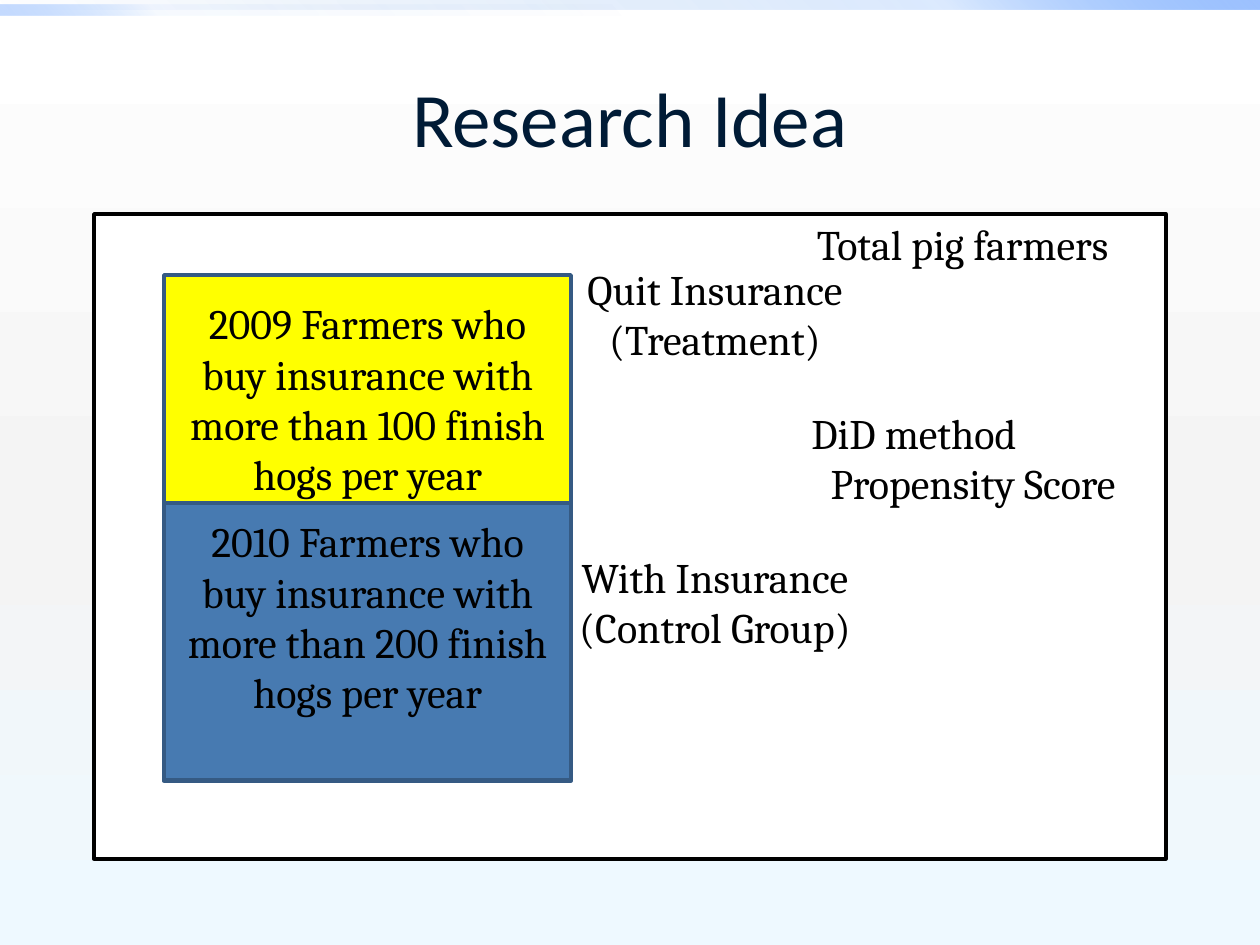
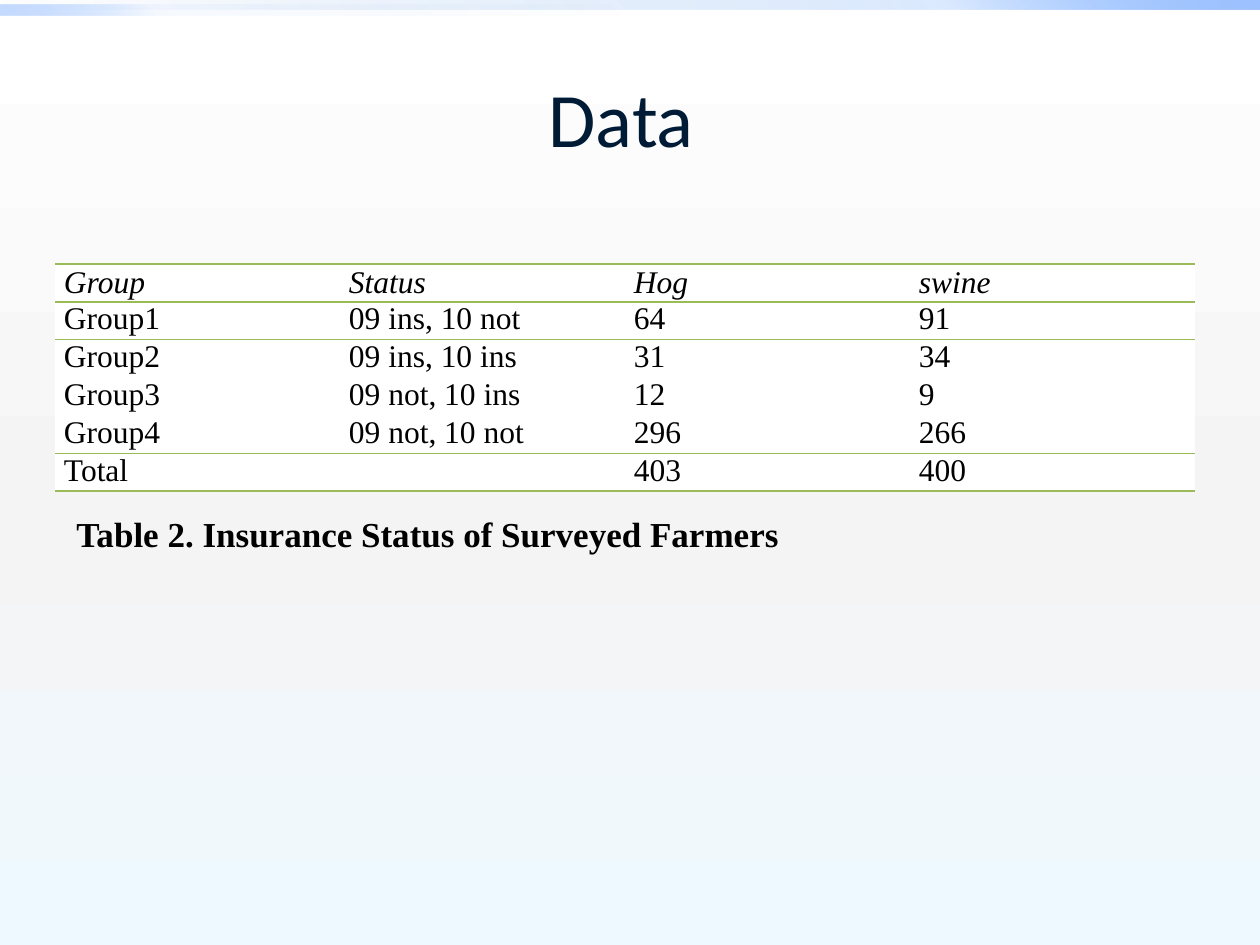
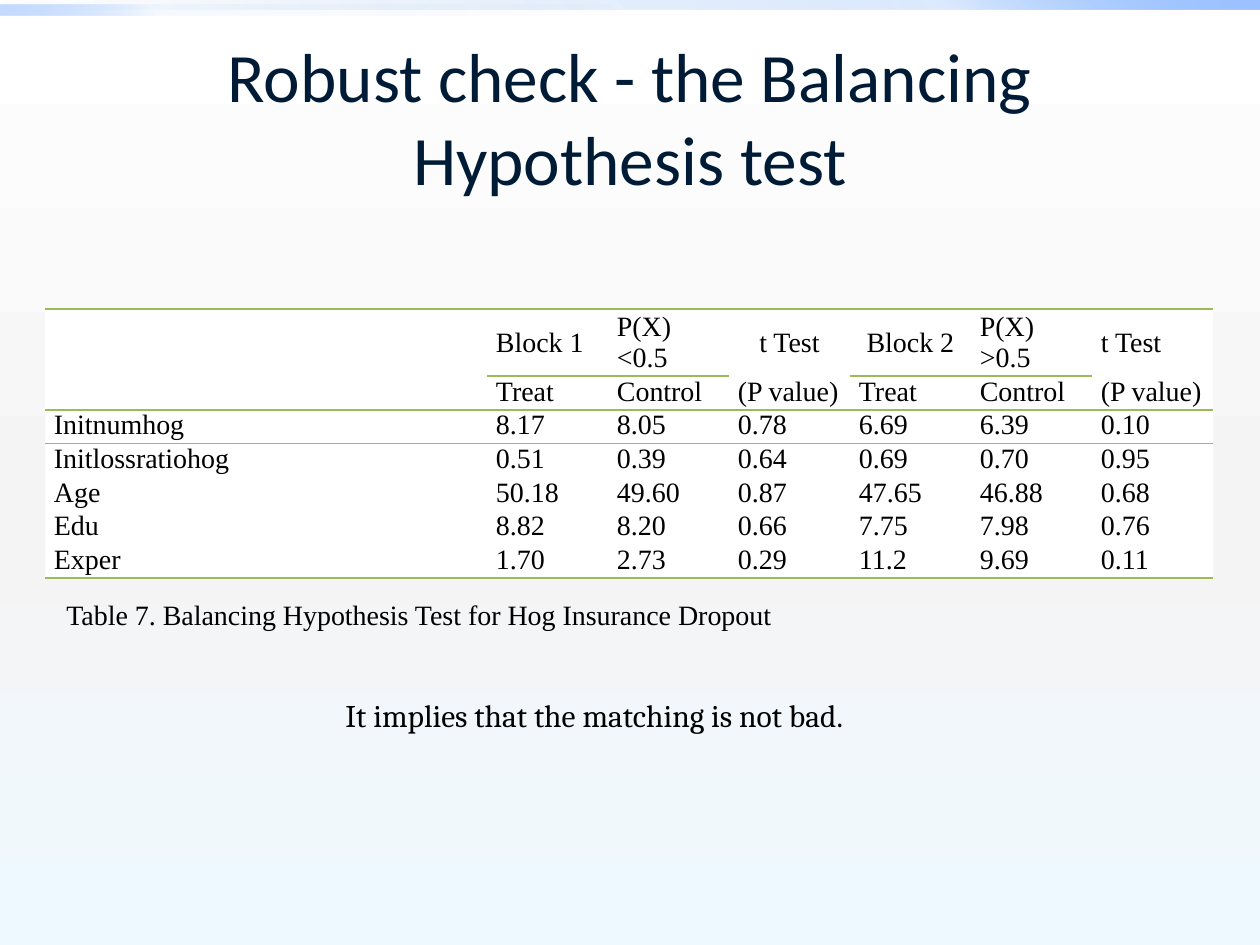
from dataclasses import dataclass
from itertools import cycle

import pptx
import pptx.dml.color
import pptx.enum.shapes
import pptx.enum.text
import pptx.oxml
import pptx.oxml.ns
import pptx.presentation
import pptx.shapes.autoshape
import pptx.slide
import pptx.text.text
import pptx.util
from lxml import etree

ALIGN = pptx.enum.text.PP_ALIGN
ANCHOR = pptx.enum.text.MSO_ANCHOR
qn = pptx.oxml.ns.qn
EMU_PER_PX = 914400 / 126
SLIDE_WIDTH, SLIDE_HEIGHT = 1260, 945
NO_TABLE_STYLE = "{2D5ABB26-0587-4C30-8999-92F81FD0307C}"


@dataclass(frozen=True)
class Theme:
    title_color: str = "001B36"
    ink: str = "000000"
    paper: str = "FFFFFF"
    outline: str = "355A83"
    yellow: str = "FFFF00"
    blue: str = "477AB1"
    rule: str = "9BBB59"
    title_font: str = "Calibri"
    body_font: str = "Cambria"
    table_font: str = "Times New Roman"
    title_size: float = 44
    long_title_size: float = 39.6
    body_size: float = 24
    caption_size: float = 20
    table_size: float = 18
    small_size: float = 16
    outline_width: float = 2
    rule_width: float = 1


THEME = Theme()


@dataclass(frozen=True)
class Box:
    left: int
    top: int
    width: int
    height: int

    def emu(self) -> list[pptx.util.Emu]:
        return [px(v) for v in (self.left, self.top, self.width, self.height)]


@dataclass(frozen=True)
class Stop:
    position: int
    color: str
    alpha: int = 100


@dataclass(frozen=True)
class Band:
    box: Box
    angle: int
    stops: tuple[Stop, ...]


@dataclass(frozen=True)
class Panel:
    box: Box
    fill: str
    line: str


@dataclass(frozen=True)
class Label:
    box: Box
    text: str
    aligns: tuple[ALIGN, ...] = (ALIGN.CENTER,)


@dataclass(frozen=True)
class Grid:
    """A table; rules maps each horizontal boundary to the columns it crosses."""
    left: int
    top: int
    columns: tuple[int, ...]
    row_heights: tuple[int, ...]
    rows: tuple[tuple[str, ...], ...]
    rules: dict[int, tuple[int, ...]]
    size: float
    italic_header: bool = False
    centered: tuple[tuple[int, int], ...] = ()


BACKGROUND = (Stop(0, "FFFFFF"), Stop(55, "F4F4F4"), Stop(100, "EEF9FF"))
BANDS = (
    Band(Box(0, 0, SLIDE_WIDTH, 10), 315,
         (Stop(0, "0058B7", 0), Stop(75, "4F95FF", 20), Stop(100, "9EC2FF"))),
    Band(Box(0, 5, SLIDE_WIDTH // 2, 10), 135,
         (Stop(0, "0058B7", 0), Stop(75, "4F95FF", 5), Stop(100, "9EC2FF", 60))),
)
TITLE_BOX = Box(63, 38, 1134, 157)

PANELS = (
    Panel(Box(94, 214, 1072, 645), THEME.paper, THEME.ink),
    Panel(Box(164, 275, 407, 506), THEME.yellow, THEME.outline),
    Panel(Box(164, 503, 407, 277), THEME.blue, THEME.outline),
)
LABELS = (
    Label(Box(769, 214, 387, 59), "Total pig farmers"),
    Label(Box(174, 304, 387, 189),
          "2009 Farmers who buy insurance with more than 100 finish hogs per year"),
    Label(Box(174, 522, 387, 189),
          "2010 Farmers who buy insurance with more than 200 finish hogs per year"),
    Label(Box(551, 284, 328, 59), "Quit Insurance\n(Treatment)"),
    Label(Box(551, 552, 328, 100), "With Insurance\n(Control Group)"),
    Label(Box(799, 393, 348, 129), "DiD method\nPropensity Score",
          (ALIGN.LEFT, ALIGN.CENTER)),
)

STATUS_GRID = Grid(
    left=55, top=264, columns=(285,) * 4, row_heights=(35,) * 6,
    rows=(
        ("Group", "Status", "Hog", "swine"),
        ("Group1", "09 ins, 10 not ", "64", "91"),
        ("Group2", "09 ins, 10 ins", "31", "34"),
        ("Group3", "09 not, 10 ins", "12", "9"),
        ("Group4", "09 not, 10 not", "296", "266"),
        ("Total", "", "403", "400"),
    ),
    rules={boundary: tuple(range(4)) for boundary in (0, 1, 5, 6)},
    size=THEME.table_size, italic_header=True,
)
BALANCE_GRID = Grid(
    left=45, top=309, columns=(442,) + (121,) * 6, row_heights=(62,) + (31,) * 6,
    rows=(
        ("", "Block 1", "P(X)\n<0.5", "t Test", "Block 2", "P(X)\n>0.5", "t Test"),
        ("", "Treat", "Control", "(P value)", "Treat", "Control", "(P value)"),
        ("Initnumhog", "8.17", "8.05", "0.78", "6.69", "6.39", "0.10"),
        ("Initlossratiohog", "0.51", "0.39", "0.64", "0.69", "0.70", "0.95"),
        ("Age", "50.18", "49.60", "0.87", "47.65", "46.88", "0.68"),
        ("Edu", "8.82", "8.20", "0.66", "7.75", "7.98", "0.76"),
        ("Exper", "1.70", "2.73", "0.29", "11.2", "9.69", "0.11"),
    ),
    rules={**{boundary: tuple(range(7)) for boundary in (0, 2, 7)}, 1: (1, 2, 4, 5)},
    size=THEME.small_size, centered=((0, 3), (0, 4)),
)


def px(value: int) -> pptx.util.Emu:
    return pptx.util.Emu(round(value * EMU_PER_PX))


def rgb(color: str) -> pptx.dml.color.RGBColor:
    return pptx.dml.color.RGBColor.from_string(color)


def write_text(frame: pptx.text.text.TextFrame, text: str, *, font: str, size: float,
               color: str = THEME.ink, aligns: tuple[ALIGN, ...] = (ALIGN.LEFT,),
               bold: bool = False, italic: bool = False) -> None:
    """Write one paragraph per line, repeating the alignments in turn."""
    for index, (line, align) in enumerate(zip(text.split("\n"), cycle(aligns))):
        paragraph = frame.add_paragraph() if index else frame.paragraphs[0]
        paragraph.alignment = align
        if line:
            run = paragraph.add_run()
            run.text = line
            style = run.font
        else:
            style = pptx.text.text.Font(paragraph._p.get_or_add_endParaRPr())
        style.name = font
        style.size = pptx.util.Pt(size)
        style.bold = bold
        style.italic = italic
        style.color.rgb = rgb(color)


def add_text(slide: pptx.slide.Slide, box: Box, text: str, *,
             anchor: ANCHOR = ANCHOR.MIDDLE, **text_format) -> None:
    frame = slide.shapes.add_textbox(*box.emu()).text_frame
    frame.word_wrap = True
    frame.vertical_anchor = anchor
    write_text(frame, text, **text_format)


def set_gradient(fill: pptx.dml.fill.FillFormat, owner: etree._Element,
                 stops: tuple[Stop, ...], angle: int) -> None:
    """Fill with any number of stops; the angle runs clockwise."""
    fill.gradient()
    gradient = owner.find(".//" + qn("a:gradFill"))
    stop_list = gradient.find(qn("a:gsLst"))
    for old_stop in list(stop_list):
        stop_list.remove(old_stop)
    for stop in stops:
        entry = etree.SubElement(stop_list, qn("a:gs"), pos=str(stop.position * 1000))
        color = etree.SubElement(entry, qn("a:srgbClr"), val=stop.color)
        if stop.alpha < 100:
            etree.SubElement(color, qn("a:alpha"), val=str(stop.alpha * 1000))
    gradient.find(qn("a:lin")).set("ang", str(angle * 60000))


def add_rectangle(slide: pptx.slide.Slide, box: Box) -> pptx.shapes.autoshape.Shape:
    shape = slide.shapes.add_shape(
        pptx.enum.shapes.MSO_SHAPE.RECTANGLE, *box.emu())
    shape.shadow.inherit = False
    return shape


def add_band(slide: pptx.slide.Slide, band: Band) -> None:
    shape = add_rectangle(slide, band.box)
    set_gradient(shape.fill, shape._element.spPr, band.stops, band.angle)
    shape.line.fill.background()


def add_panel(slide: pptx.slide.Slide, panel: Panel) -> None:
    shape = add_rectangle(slide, panel.box)
    shape.fill.solid()
    shape.fill.fore_color.rgb = rgb(panel.fill)
    shape.line.color.rgb = rgb(panel.line)
    shape.line.width = pptx.util.Pt(THEME.outline_width)


def add_cell_rule(cell: pptx.table._Cell, tag: str) -> None:
    line = etree.SubElement(cell._tc.get_or_add_tcPr(), qn(tag),
                            w=str(pptx.util.Pt(THEME.rule_width)))
    fill = etree.SubElement(line, qn("a:solidFill"))
    etree.SubElement(fill, qn("a:srgbClr"), val=THEME.rule)


def add_grid(slide: pptx.slide.Slide, grid: Grid) -> None:
    box = Box(grid.left, grid.top, sum(grid.columns), sum(grid.row_heights))
    table = slide.shapes.add_table(
        len(grid.rows), len(grid.columns), *box.emu()).table
    table.first_row = table.horz_banding = False
    table._tbl.tblPr.find(qn("a:tableStyleId")).text = NO_TABLE_STYLE
    for column, width in zip(table.columns, grid.columns):
        column.width = px(width)
    for row, height in zip(table.rows, grid.row_heights):
        row.height = px(height)
    for row_index, texts in enumerate(grid.rows):
        for column_index, text in enumerate(texts):
            cell = table.cell(row_index, column_index)
            cell.margin_left = cell.margin_right = px(9)
            cell.margin_top = cell.margin_bottom = 0
            cell.vertical_anchor = ANCHOR.TOP if row_index else ANCHOR.MIDDLE
            for tag, boundary in (("a:lnT", row_index), ("a:lnB", row_index + 1)):
                if column_index in grid.rules.get(boundary, ()):
                    add_cell_rule(cell, tag)
            cell.fill.solid()
            cell.fill.fore_color.rgb = rgb(THEME.paper)
            centered = (row_index, column_index) in grid.centered
            write_text(cell.text_frame, text, font=THEME.table_font, size=grid.size,
                       aligns=(ALIGN.CENTER if centered else ALIGN.JUSTIFY,),
                       italic=grid.italic_header and row_index == 0)


def add_slide(presentation: pptx.presentation.Presentation, title: str,
              title_size: float = THEME.title_size) -> pptx.slide.Slide:
    """Add a slide with the shared background, bands and title."""
    slide = presentation.slides.add_slide(presentation.slide_layouts[6])
    set_gradient(slide.background.fill, slide._element, BACKGROUND, 90)
    for band in BANDS:
        add_band(slide, band)
    add_text(slide, TITLE_BOX, title, font=THEME.title_font, size=title_size,
             color=THEME.title_color, aligns=(ALIGN.CENTER,))
    return slide


def add_research_slide(presentation: pptx.presentation.Presentation) -> None:
    slide = add_slide(presentation, "Research Idea")
    for panel in PANELS:
        add_panel(slide, panel)
    for label in LABELS:
        add_text(slide, label.box, label.text, font=THEME.body_font,
                 size=THEME.body_size, aligns=label.aligns)


def add_data_slide(presentation: pptx.presentation.Presentation) -> None:
    slide = add_slide(presentation, "Data ")
    add_grid(slide, STATUS_GRID)
    add_text(slide, Box(64, 506, 932, 94),
             "Table 2. Insurance Status of Surveyed Farmers", anchor=ANCHOR.TOP,
             font=THEME.table_font, size=THEME.caption_size, bold=True)


def add_balance_slide(presentation: pptx.presentation.Presentation) -> None:
    slide = add_slide(presentation, "Robust check - the Balancing Hypothesis test",
                      THEME.long_title_size)
    add_grid(slide, BALANCE_GRID)
    add_text(slide, Box(54, 591, 759, 47),
             "Table 7. Balancing Hypothesis Test for Hog Insurance Dropout",
             font=THEME.table_font, size=THEME.small_size)
    add_text(slide, Box(333, 690, 586, 50), "It implies that the matching is not bad.",
             anchor=ANCHOR.TOP, font=THEME.body_font, size=THEME.table_size)


def main() -> None:
    presentation = pptx.Presentation()
    presentation.slide_width = px(SLIDE_WIDTH)
    presentation.slide_height = px(SLIDE_HEIGHT)
    add_research_slide(presentation)
    add_data_slide(presentation)
    add_balance_slide(presentation)
    presentation.save("out.pptx")


if __name__ == "__main__":
    main()
